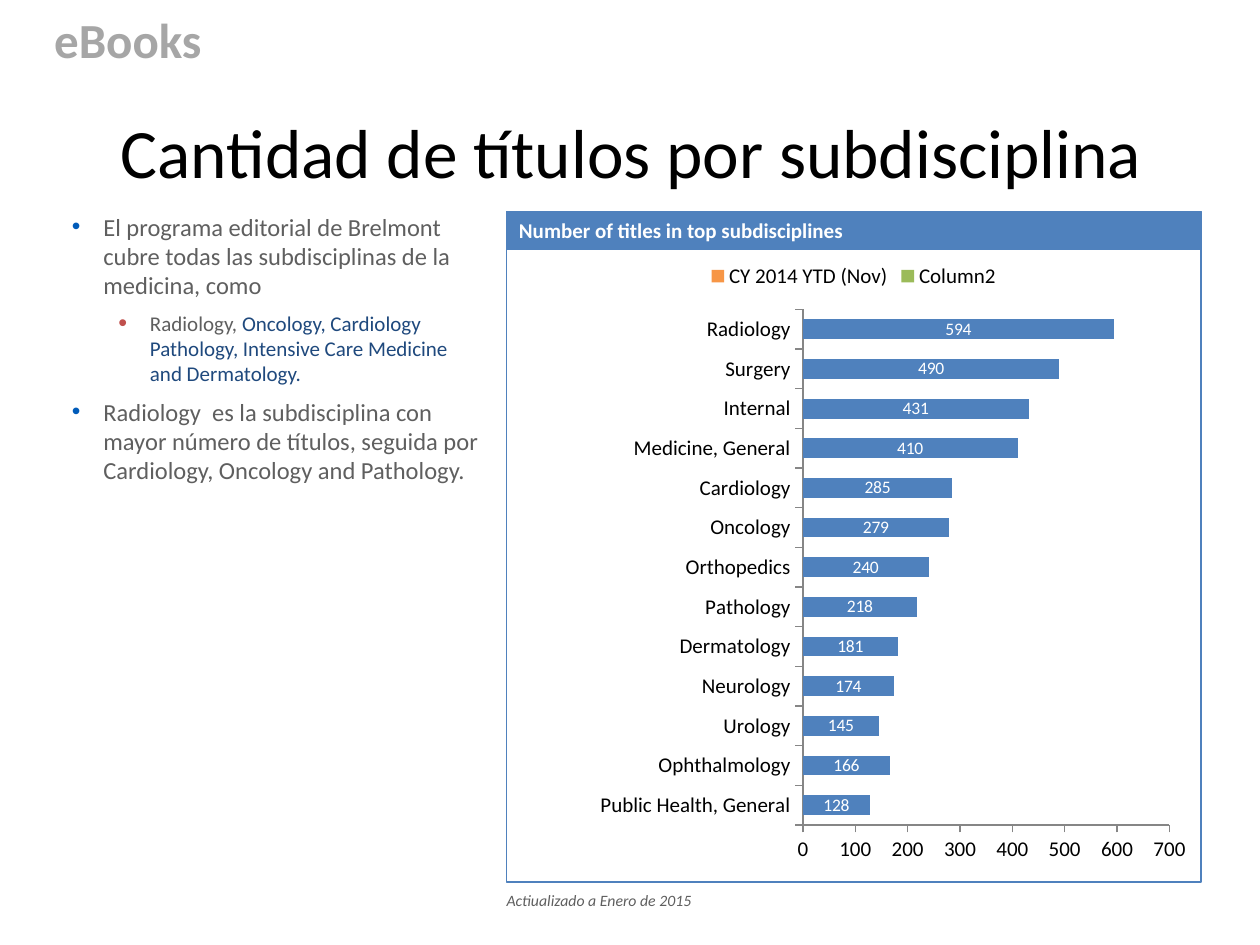
from dataclasses import dataclass
from lxml import etree
from pptx import Presentation, util as u
from pptx.chart.data import CategoryChartData
from pptx.dml.color import RGBColor
from pptx.enum import chart as charts, shapes, text
from pptx.oxml import parse_xml
from pptx.oxml.ns import nsdecls, qn


@dataclass(frozen=True)
class Theme:
    font: str = "Calibri"
    black: str = "000000"
    white: str = "FFFFFF"
    body: str = "5F5F5F"
    muted: str = "A6A6A6"
    navy: str = "1F497D"
    blue: str = "4F81BD"
    orange: str = "F79646"
    green: str = "9BBB59"
    axis: str = "868686"
    bullet: str = "005BB9"
    sub_bullet: str = "C0504D"
    title_size: float = 39.6
    section_size: int = 28
    body_size: int = 14
    detail_size: int = 12
    label_size: int = 10
    note_size: int = 9


THEME = Theme()
WIDTH, HEIGHT = 10, 7.5
SECTION = "eBooks"
TITLE = "Cantidad de títulos por subdisciplina"
PANEL_TITLE = "Number of titles in top subdisciplines"
NOTE = "Actiualizado a Enero de 2015"
BULLETS = [
    (0, [("El programa editorial de Brelmont cubre todas las subdisciplinas de la medicina, como", THEME.body)]),
    (1, [("Radiology, ", THEME.body),
         ("Oncology, Cardiology Pathology, Intensive Care Medicine and Dermatology.", THEME.navy)]),
    (0, [("Radiology  es la subdisciplina con mayor número de títulos, seguida por "
          "Cardiology, Oncology and Pathology.", THEME.body)]),
]
LEVELS = [
    dict(left=0.25, color=THEME.bullet, scale=100, size=THEME.body_size),
    dict(left=0.62, color=THEME.sub_bullet, scale=120, size=THEME.detail_size),
]
TITLES = [
    ("Public Health, General", 128), ("Ophthalmology", 166), ("Urology", 145),
    ("Neurology", 174), ("Dermatology", 181), ("Pathology", 218),
    ("Orthopedics", 240), ("Oncology", 279), ("Cardiology", 285),
    ("Medicine, General", 410), ("Internal", 431), ("Surgery", 490), ("Radiology", 594),
]
EMPTY = [None] * len(TITLES)
SERIES = [
    ("", [count for _, count in TITLES], THEME.blue),
    ("CY 2014 YTD (Nov)", EMPTY, THEME.orange),
    ("Column2", EMPTY, THEME.green),
]
HIDDEN_LEGEND_ENTRY = 2
PLOT = dict(x=0.427, y=0.095, w=0.528, h=0.815)

TOP, PANEL_LEFT, PANEL_WIDTH, PANEL_HEIGHT, HEADER = 1.68, 4.02, 5.51, 5.32, 0.3
PANEL_BOTTOM = TOP + PANEL_HEIGHT


def inches(*lengths):
    return [u.Inches(length) for length in lengths]


def style(font, size, color, bold=False, italic=False):
    font.name, font.size = THEME.font, u.Pt(size)
    font.bold, font.italic = bold, italic
    font.color.rgb = RGBColor.from_string(color)


def add_run(paragraph, words, *look, **flags):
    run = paragraph.add_run()
    run.text = words
    style(run.font, *look, **flags)


def add_text_box(slide, *box, wrap=True):
    frame = slide.shapes.add_textbox(*inches(*box)).text_frame
    frame.word_wrap = wrap
    frame.margin_left = frame.margin_right = frame.margin_top = frame.margin_bottom = 0
    return frame


def add_bullet(paragraph, left, color, scale):
    properties = paragraph._p.get_or_add_pPr()
    properties.set("marL", str(u.Inches(left)))
    properties.set("indent", str(u.Inches(-0.25)))
    tint = etree.SubElement(properties, qn("a:buClr"))
    etree.SubElement(tint, qn("a:srgbClr"), val=color)
    etree.SubElement(properties, qn("a:buSzPct"), val=str(scale * 1000))
    etree.SubElement(properties, qn("a:buFont"), typeface="Arial")
    etree.SubElement(properties, qn("a:buChar"), char="•")


def add_bullets(slide):
    frame = add_text_box(slide, 0.57, TOP, 3.25, 4.63)
    for index, (depth, runs) in enumerate(BULLETS):
        paragraph = frame.add_paragraph() if index else frame.paragraphs[0]
        level = LEVELS[depth]
        add_bullet(paragraph, level["left"], level["color"], level["scale"])
        paragraph.level = depth
        paragraph.space_before = u.Pt(6 if index else 0)
        for words, color in runs:
            add_run(paragraph, words, level["size"], color)


def add_titles_chart(slide):
    data = CategoryChartData()
    data.categories = [name for name, _ in TITLES]
    for name, values, _ in SERIES:
        data.add_series(name, values)
    box = inches(PANEL_LEFT, TOP + HEADER, PANEL_WIDTH, PANEL_HEIGHT - HEADER)
    chart = slide.shapes.add_chart(charts.XL_CHART_TYPE.BAR_STACKED, *box, data).chart
    style(chart.font, THEME.detail_size, THEME.black)
    chart.has_title = False

    plot = chart.plots[0]
    plot.gap_width, plot.overlap, plot.vary_by_categories = 100, 100, False
    for series, (_, _, color) in zip(plot.series, SERIES):
        series.format.fill.solid()
        series.format.fill.fore_color.rgb = RGBColor.from_string(color)
    labels = plot.series[0].data_labels
    labels.show_value = True
    labels.position = charts.XL_LABEL_POSITION.CENTER
    style(labels.font, THEME.label_size, THEME.white)

    for axis in (chart.category_axis, chart.value_axis):
        axis.has_major_gridlines = False
        axis.major_tick_mark = charts.XL_TICK_MARK.OUTSIDE
        axis.minor_tick_mark = charts.XL_TICK_MARK.NONE
        axis.format.line.color.rgb = RGBColor.from_string(THEME.axis)
        style(axis.tick_labels.font, THEME.detail_size, THEME.black)
    chart.value_axis.minimum_scale, chart.value_axis.maximum_scale = 0, 700
    chart.value_axis.major_unit = 100

    chart.has_legend = True
    chart.legend.position = charts.XL_LEGEND_POSITION.TOP
    chart.legend.include_in_layout = False
    style(chart.legend.font, THEME.detail_size, THEME.black)
    entry = parse_xml(f'<c:legendEntry {nsdecls("c")}><c:idx val="{HIDDEN_LEGEND_ENTRY}"/>'
                      '<c:delete val="1"/></c:legendEntry>')
    chart.legend._element.find(qn("c:legendPos")).addnext(entry)

    area = chart._chartSpace.chart.plotArea
    for old in area.findall(qn("c:layout")):
        area.remove(old)
    modes = "".join(f'<c:{axis}Mode val="edge"/>' for axis in "xy")
    sizes = "".join(f'<c:{key} val="{share}"/>' for key, share in PLOT.items())
    area.insert(0, parse_xml(f'<c:layout {nsdecls("c")}><c:manualLayout>'
                             f'<c:layoutTarget val="inner"/>{modes}{sizes}'
                             '</c:manualLayout></c:layout>'))


def add_panel(slide):
    group = slide.shapes.add_group_shape()
    header, border = [
        group.shapes.add_shape(shapes.MSO_SHAPE.RECTANGLE,
                               *inches(PANEL_LEFT, TOP, PANEL_WIDTH, height))
        for height in (HEADER, PANEL_HEIGHT)
    ]
    for shape in (header, border):
        shape.shadow.inherit = False
        shape.line.color.rgb = RGBColor.from_string(THEME.blue)
        shape.line.width = u.Pt(1)
    border.fill.background()
    header.fill.solid()
    header.fill.fore_color.rgb = RGBColor.from_string(THEME.blue)
    paragraph = header.text_frame.paragraphs[0]
    paragraph.alignment = text.PP_ALIGN.LEFT
    add_run(paragraph, PANEL_TITLE, THEME.detail_size, THEME.white, bold=True)


def main():
    presentation = Presentation()
    presentation.slide_width, presentation.slide_height = inches(WIDTH, HEIGHT)
    slide = presentation.slides.add_slide(presentation.slide_layouts[5])

    title = slide.shapes.title
    title.left, title.top, title.width, title.height = inches(0.55, 1.03, 8.92, 0.33)
    title.text_frame.auto_size = text.MSO_AUTO_SIZE.NONE
    title.text_frame.vertical_anchor = text.MSO_ANCHOR.MIDDLE
    paragraph = title.text_frame.paragraphs[0]
    paragraph.alignment = text.PP_ALIGN.CENTER
    add_run(paragraph, TITLE, THEME.title_size, THEME.black)

    note = add_text_box(slide, PANEL_LEFT, PANEL_BOTTOM + 0.07, 1.48, 0.15, wrap=False)
    add_run(note.paragraphs[0], NOTE, THEME.note_size, THEME.body, italic=True)
    add_bullets(slide)
    add_titles_chart(slide)
    add_panel(slide)

    section = add_text_box(slide, 0.43, 0.13, 8.92, 0.42).paragraphs[0]
    section.line_spacing = 0.9
    add_run(section, SECTION, THEME.section_size, THEME.muted, bold=True)
    presentation.save("out.pptx")


if __name__ == "__main__":
    main()
